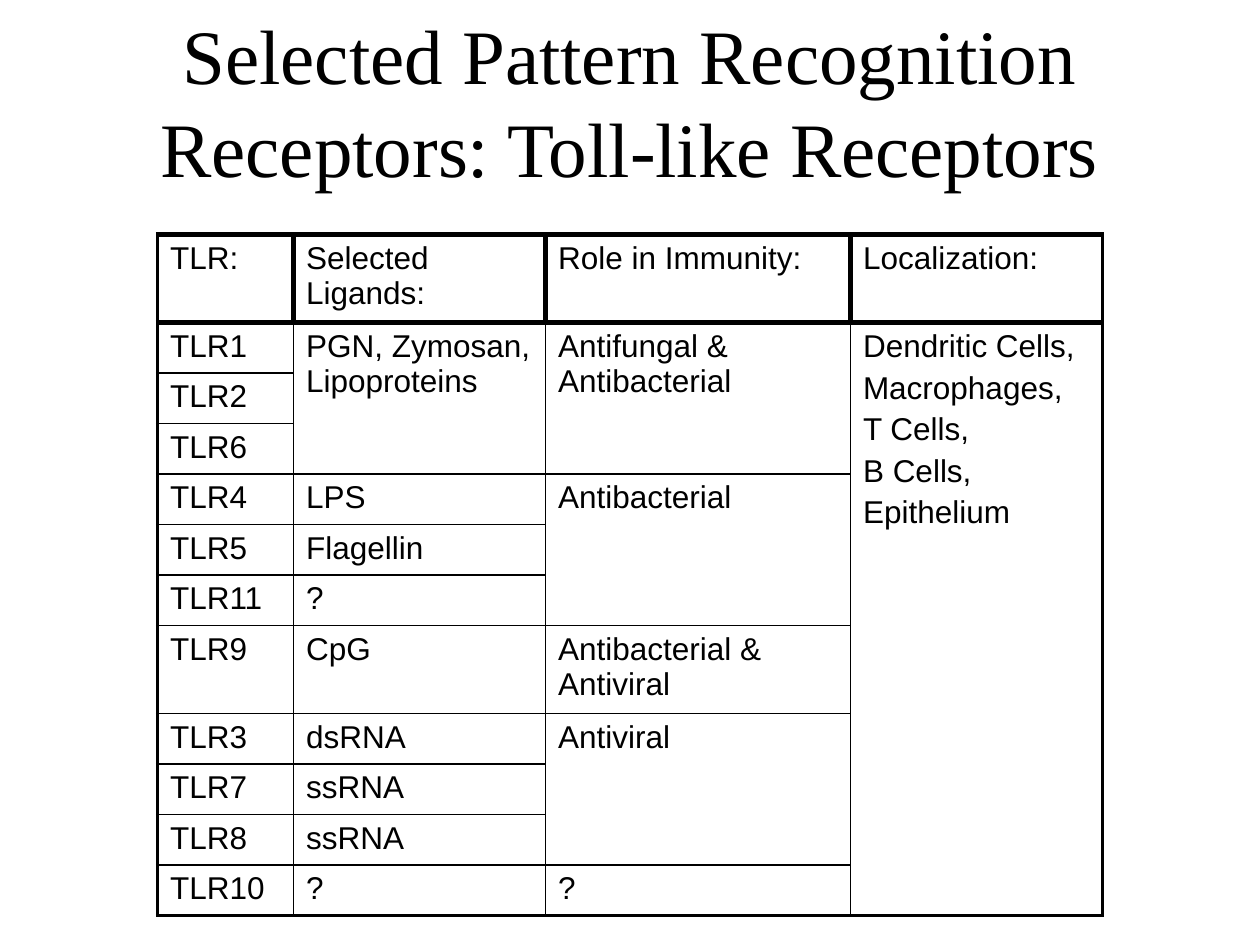
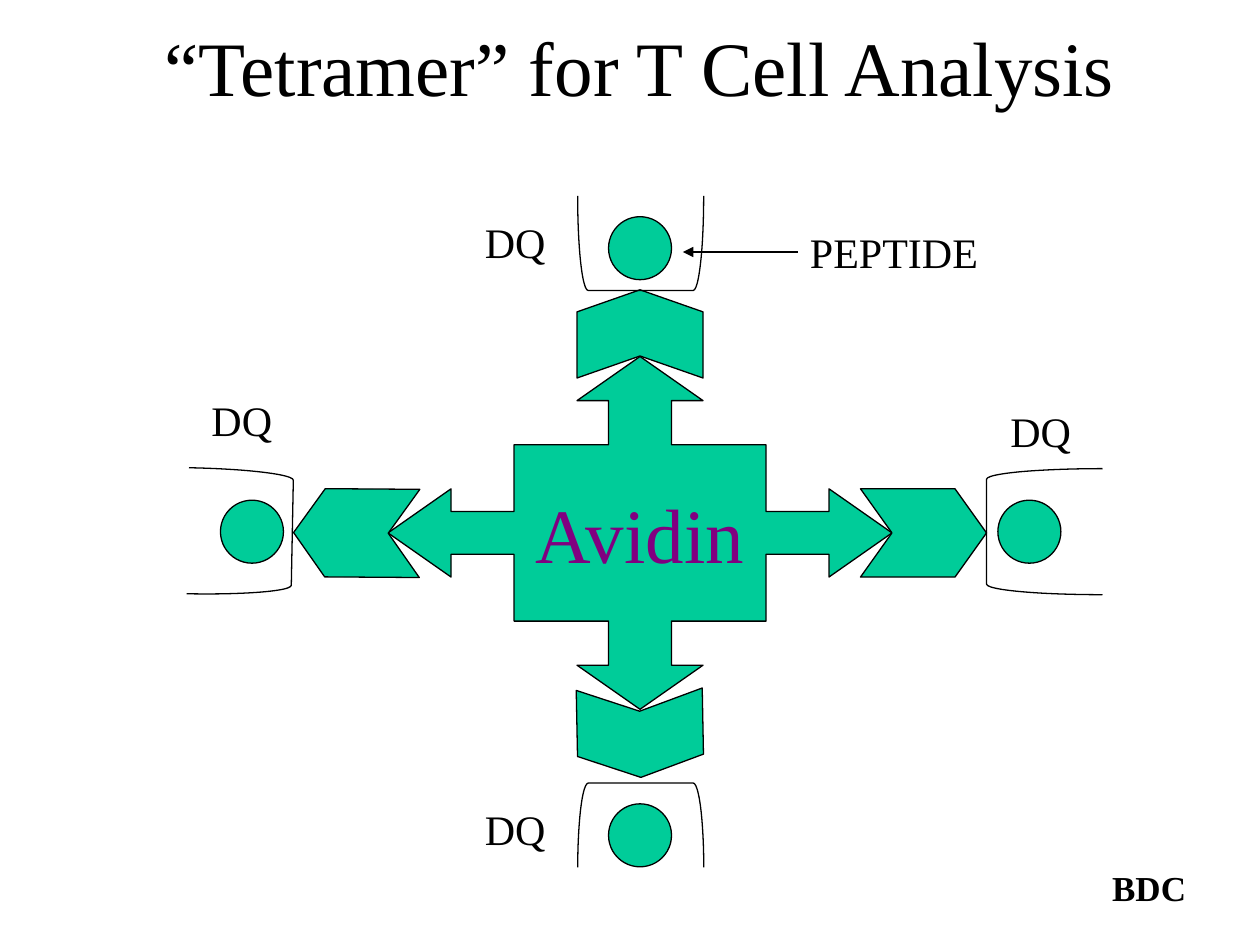
from lxml import etree
from pptx import Presentation
from pptx.dml.color import RGBColor
from pptx.enum.shapes import MSO_CONNECTOR, MSO_SHAPE
from pptx.enum.text import MSO_ANCHOR, PP_ALIGN
from pptx.oxml.ns import qn
from pptx.util import Inches, Pt

BLACK, WHITE, GREEN, PURPLE = "000000", "FFFFFF", "00CC99", "800080"
SERIF, SANS = "Times New Roman", "Arial"

COLUMN_WIDTHS = [1.08, 2, 2.42, 2]
ROW_HEIGHT, TWO_LINE_HEIGHT = 0.38, 0.66
TWO_LINE_ROWS = (0, 7)
TLR_ROWS = [
    ("TLR:", "Selected Ligands:", "Role in Immunity:", "Localization:"),
    ("TLR1", "PGN, Zymosan, Lipoproteins", "Antifungal & Antibacterial",
     "Dendritic Cells,\nMacrophages,\nT Cells,\nB Cells,\nEpithelium"),
    ("TLR2",),
    ("TLR6",),
    ("TLR4", "LPS", "Antibacterial"),
    ("TLR5", "Flagellin"),
    ("TLR11", "?"),
    ("TLR9", "CpG", "Antibacterial & Antiviral"),
    ("TLR3", "dsRNA", "Antiviral"),
    ("TLR7", "ssRNA"),
    ("TLR8", "ssRNA"),
    ("TLR10", "?", "?"),
]
# column, first row, last row
MERGES = [(1, 1, 3), (2, 1, 3), (2, 4, 6), (2, 8, 10), (3, 1, 11)]

CENTER_X, CENTER_Y = 5.08, 4.23
# Top-right quarter of the avidin outline, as offsets from its centre
AVIDIN_QUARTER = [(0, -1.4), (0.5, -1.05), (0.25, -1.05), (0.25, -0.7), (1, -0.7),
                  (1, -0.17), (1.5, -0.17), (1.5, -0.35), (2, 0)]

# Each arm: (box, rotation, adjustment) of chevron and bracket, then peptide and label places
ARMS = [
    (((6.83, 3.88, 1, 0.7), 0, 0.357), ((7.83, 3.72, 0.92, 1), 0, 0.091),
     (7.92, 3.97), (7.92, 3.17)),
    (((2.33, 3.88, 1, 0.7), 180.4, 0.356), ((1.49, 3.72, 0.83, 1), 181.1, 0.1),
     (1.75, 3.97), (1.58, 3.08)),
    (((4.73, 5.32, 0.7, 1), 88.9, 0.25), ((4.75, 6.05, 0.67, 1), 90, 0.125),
     (4.83, 6.38), (3.75, 6.33)),
    (((4.73, 2.15, 0.7, 1), 270, 0.25), ((4.71, 1.43, 0.75, 1), 270, 0.111),
     (4.83, 1.72), (3.75, 1.67)),
]


def rgb(color):
    return RGBColor.from_string(color)


def add_run(paragraph, text, size, color=BLACK, font=SERIF, bold=False):
    run = paragraph.add_run()
    run.text = text
    run.font.size = Pt(size)
    run.font.name = font
    run.font.bold = bold
    run.font.color.rgb = rgb(color)


def add_text(slide, box, text, size, align=PP_ALIGN.LEFT, anchor=MSO_ANCHOR.TOP,
             wrap=True, bold=False):
    label = slide.shapes.add_textbox(*map(Inches, box))
    frame = label.text_frame
    frame.word_wrap = wrap
    frame.vertical_anchor = anchor
    frame.paragraphs[0].alignment = align
    add_run(frame.paragraphs[0], text, size, bold=bold)
    return label


def add_title(slide, box, text):
    add_text(slide, box, text, 44, PP_ALIGN.CENTER, MSO_ANCHOR.MIDDLE)


def style_outline(shape, fill=GREEN):
    shape.shadow.inherit = False
    if fill:
        shape.fill.solid()
        shape.fill.fore_color.rgb = rgb(fill)
    else:
        shape.fill.background()
    shape.line.color.rgb = rgb(BLACK)
    shape.line.width = Pt(0.75)


def add_preset(slide, kind, box, rotation=0, adjustment=None, fill=GREEN):
    shape = slide.shapes.add_shape(kind, *map(Inches, box))
    shape.rotation = rotation
    if adjustment is not None:
        shape.adjustments[0] = adjustment
    style_outline(shape, fill)


def set_borders(cell, widths):
    """Draw solid black borders; widths are points for left, right, top, bottom."""
    properties = cell._tc.get_or_add_tcPr()
    for index, (side, width) in enumerate(zip("LRTB", widths)):
        border = etree.Element(qn(f"a:ln{side}"), w=str(Pt(width)))
        fill = etree.SubElement(border, qn("a:solidFill"))
        etree.SubElement(fill, qn("a:srgbClr"), val=BLACK)
        properties.insert(index, border)


def border_widths(row, column, span):
    """Heavy header, medium outer frame, thin inner grid."""
    last_row, last_column = len(TLR_ROWS), len(COLUMN_WIDTHS)
    inner = 3 if row == 0 else 1

    def upright(edge):
        return 2.25 if edge in (0, last_column) else inner

    def level(edge):
        return 3 if edge <= 1 else 2.25 if edge == last_row else 1

    return upright(column), upright(column + 1), level(row), level(row + span)


def fill_cell(cell, text):
    cell.fill.solid()
    cell.fill.fore_color.rgb = rgb(WHITE)
    frame = cell.text_frame
    for index, line in enumerate(text.split("\n")):
        paragraph = frame.add_paragraph() if index else frame.paragraphs[0]
        if index:
            paragraph.space_before = Pt(3.6)
        if line:
            add_run(paragraph, line, 18, font=SANS)


def add_receptor_table(slide):
    heights = [TWO_LINE_HEIGHT if row in TWO_LINE_ROWS else ROW_HEIGHT
               for row in range(len(TLR_ROWS))]
    table = slide.shapes.add_table(
        len(TLR_ROWS), len(COLUMN_WIDTHS), Inches(1.25), Inches(1.86),
        Inches(sum(COLUMN_WIDTHS)), Inches(sum(heights))).table
    table.first_row = table.horz_banding = False
    for column, width in zip(table.columns, COLUMN_WIDTHS):
        column.width = Inches(width)
    for row, height in zip(table.rows, heights):
        row.height = Inches(height)
    for column, first, last in MERGES:
        table.cell(first, column).merge(table.cell(last, column))
    for row, texts in enumerate(TLR_ROWS):
        for column in range(len(COLUMN_WIDTHS)):
            cell = table.cell(row, column)
            fill_cell(cell, texts[column] if column < len(texts) else "")
            span = cell.span_height if cell.is_merge_origin else 1
            set_borders(cell, border_widths(row, column, span))


def add_avidin(slide):
    right_half = AVIDIN_QUARTER + [(x, -y) for x, y in AVIDIN_QUARTER[-2::-1]]
    left_half = [(-x, y) for x, y in right_half[-2:0:-1]]
    points = [(Inches(CENTER_X + x), Inches(CENTER_Y + y)) for x, y in right_half + left_half]
    builder = slide.shapes.build_freeform(*points[0])
    builder.add_line_segments(points[1:], close=True)
    avidin = builder.convert_to_shape()
    style_outline(avidin)
    frame = avidin.text_frame
    frame.word_wrap = False
    frame.vertical_anchor = MSO_ANCHOR.MIDDLE
    frame.paragraphs[0].alignment = PP_ALIGN.CENTER
    add_run(frame.paragraphs[0], "Avidin", 44, PURPLE)


def add_arm(slide, chevron, bracket, peptide, label):
    add_preset(slide, MSO_SHAPE.CHEVRON, *chevron)
    add_preset(slide, MSO_SHAPE.LEFT_BRACKET, *bracket, fill=None)
    add_preset(slide, MSO_SHAPE.OVAL, (*peptide, 0.5, 0.5))
    add_text(slide, (*label, 0.68, 0.5), "DQ", 24, wrap=False)


def add_pointer(slide, label, tip_x, tip_y):
    """Draw an arrow from the left side of a label to the tip."""
    pointer = slide.shapes.add_connector(
        MSO_CONNECTOR.STRAIGHT, label.left, label.top + label.height // 2,
        Inches(tip_x), Inches(tip_y))
    pointer.begin_connect(label, 1)
    pointer.line.color.rgb = rgb(BLACK)
    pointer.line.width = Pt(1.5)
    etree.SubElement(pointer.line._get_or_add_ln(), qn("a:tailEnd"), type="triangle")
    etree.SubElement(pointer._element.spPr, qn("a:effectLst"))


def build_receptors(slide):
    add_title(slide, (0.75, 0.17, 8.5, 1.25),
              "Selected Pattern Recognition Receptors: Toll-like Receptors")
    add_receptor_table(slide)


def build_tetramer(slide):
    add_avidin(slide)
    for arm in ARMS:
        add_arm(slide, *arm)
    add_title(slide, (0.08, 0.08, 10, 0.88), "“Tetramer” for T Cell Analysis")
    peptide_label = add_text(slide, (6.33, 1.75, 1.58, 0.5), "PEPTIDE", 24)
    add_pointer(slide, peptide_label, 5.42, 2)
    add_text(slide, (8.58, 6.83, 1.08, 0.43), "BDC", 20, PP_ALIGN.CENTER, bold=True)


def main():
    deck = Presentation()
    deck.slide_width, deck.slide_height = Inches(10), Inches(7.5)
    blank = deck.slide_layouts[6]
    for build in (build_receptors, build_tetramer):
        build(deck.slides.add_slide(blank))
    deck.save("out.pptx")


if __name__ == "__main__":
    main()
